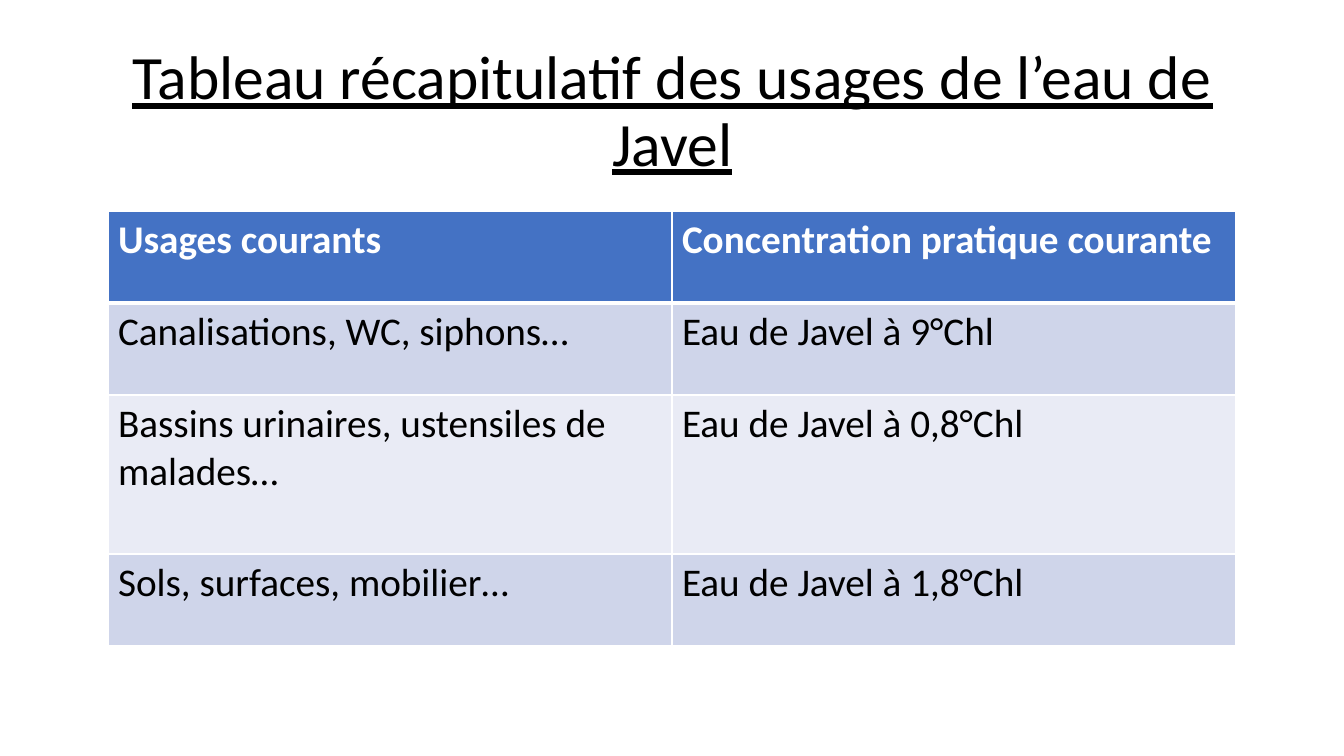
from dataclasses import dataclass

from lxml.etree import SubElement
from pptx import Presentation
from pptx.dml.color import RGBColor
from pptx.enum.text import MSO_ANCHOR, MSO_AUTO_SIZE, PP_ALIGN
from pptx.oxml.ns import qn
from pptx.slide import Slide
from pptx.table import _Cell
from pptx.text.text import TextFrame
from pptx.util import Emu, Pt

PX_PER_INCH = 100.8
FONT = "Calibri"
BLACK = RGBColor(0x00, 0x00, 0x00)
WHITE = RGBColor(0xFF, 0xFF, 0xFF)
HEADER_BLUE = RGBColor(0x44, 0x72, 0xC4)
BAND_DARK = RGBColor(0xCF, 0xD5, 0xEA)
BAND_LIGHT = RGBColor(0xE9, 0xEB, 0xF5)
COLUMN_WIDTH = 564


@dataclass(frozen=True)
class UsageRow:
    usage: str
    concentration: str
    height: int = 92


ROWS = [
    UsageRow("Usages courants", "Concentration pratique courante"),
    UsageRow("Canalisations, WC, siphons…", "Eau de Javel à 9°Chl"),
    UsageRow("Bassins urinaires, ustensiles de malades…", "Eau de Javel à 0,8°Chl", 159),
    UsageRow("Sols, surfaces, mobilier…", "Eau de Javel à 1,8°Chl"),
]


def px(length: int) -> Emu:
    return Emu(round(length * 914400 / PX_PER_INCH))


def write(frame: TextFrame, text: str, *, size: int, color: RGBColor = BLACK,
          bold: bool = False, underline: bool = False,
          align: PP_ALIGN = PP_ALIGN.LEFT, line_spacing: float = 1.0) -> None:
    para = frame.paragraphs[0]
    para.alignment = align
    para.line_spacing = line_spacing
    span = para.add_run()
    span.text = text
    span.font.name = FONT
    span.font.size = Pt(size)
    span.font.color.rgb = color
    span.font.bold = bold
    span.font.underline = underline


def add_borders(cell: _Cell, bottom: int) -> None:
    """Draw white borders, 1 pt wide on every side except the bottom; call before filling."""
    properties = cell._tc.get_or_add_tcPr()
    for side, width in {"L": 1, "R": 1, "T": 1, "B": bottom}.items():
        line = SubElement(properties, qn(f"a:ln{side}"), w=str(Pt(width)))
        fill = SubElement(line, qn("a:solidFill"))
        SubElement(fill, qn("a:srgbClr"), val=str(WHITE))


def add_title(page: Slide, text: str) -> None:
    title = page.shapes.title
    title.left, title.top, title.width, title.height = map(px, (93, 40, 1159, 146))
    frame = title.text_frame
    frame.word_wrap = True
    frame.auto_size = MSO_AUTO_SIZE.NONE
    frame.vertical_anchor = MSO_ANCHOR.MIDDLE
    write(frame, text, size=44, underline=True, align=PP_ALIGN.CENTER, line_spacing=0.9)


def add_usage_table(page: Slide, rows: list[UsageRow]) -> None:
    height = sum(row.height for row in rows)
    table = page.shapes.add_table(
        len(rows), 2, px(108), px(211), px(2 * COLUMN_WIDTH), px(height)).table
    for column in table.columns:
        column.width = px(COLUMN_WIDTH)
    for index, row in enumerate(rows):
        table.rows[index].height = px(row.height)
        header = index == 0
        band = BAND_DARK if index % 2 else BAND_LIGHT
        for cell, text in zip(table.rows[index].cells, (row.usage, row.concentration)):
            add_borders(cell, bottom=3 if header else 1)
            cell.fill.solid()
            cell.fill.fore_color.rgb = HEADER_BLUE if header else band
            write(cell.text_frame, text, size=28, bold=header,
                  color=WHITE if header else BLACK)


def main() -> None:
    deck = Presentation()
    deck.slide_width, deck.slide_height = px(1344), px(756)
    page = deck.slides.add_slide(deck.slide_layouts.get_by_name("Title Only"))
    add_title(page, "Tableau récapitulatif des usages de l’eau de Javel")
    add_usage_table(page, ROWS)
    deck.save("out.pptx")


if __name__ == "__main__":
    main()
